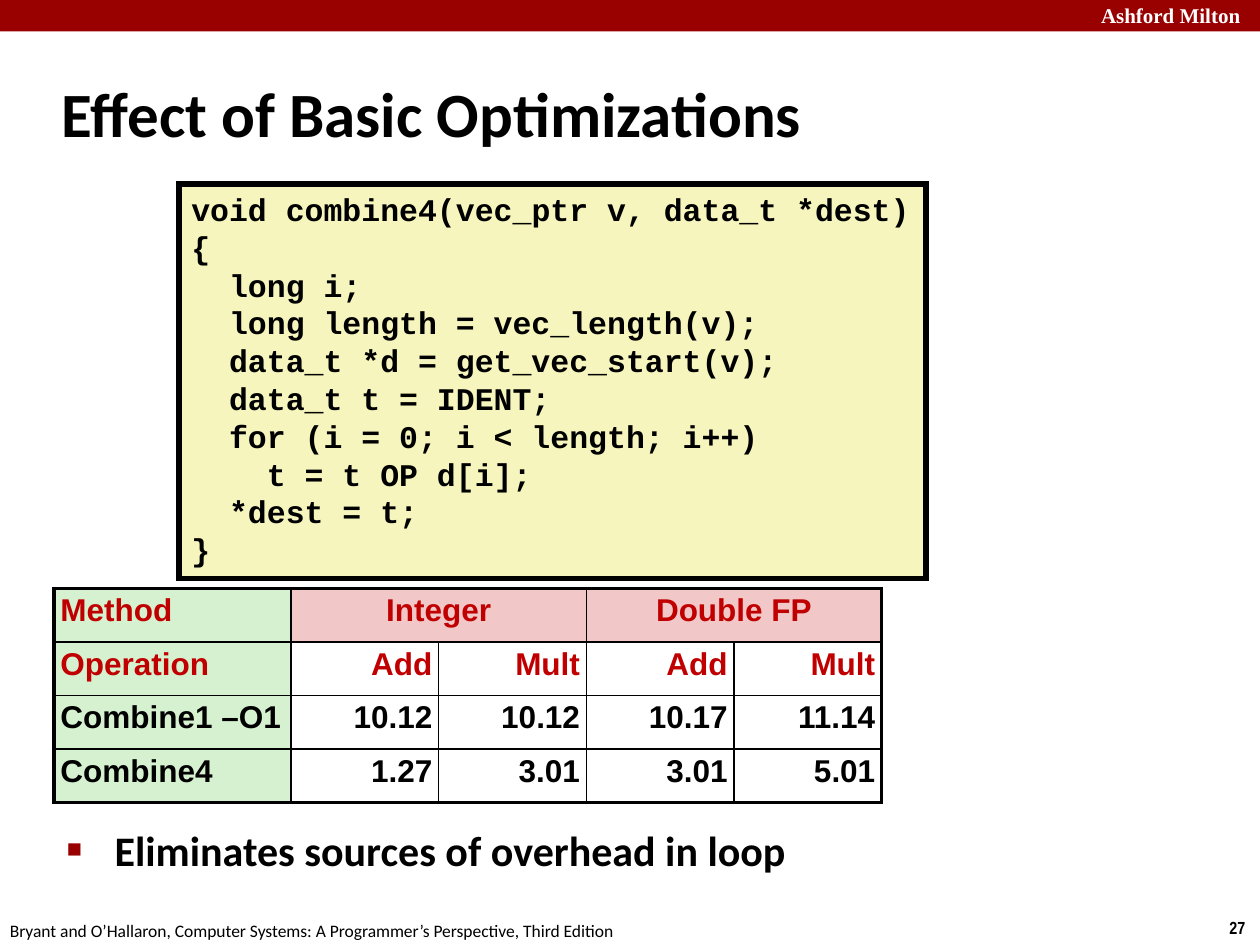
from dataclasses import dataclass
from lxml.etree import SubElement
from pptx import Presentation
from pptx.dml.color import RGBColor as Rgb
from pptx.enum.shapes import MSO_SHAPE as Shape
from pptx.enum.text import MSO_ANCHOR as Anchor, MSO_AUTO_SIZE as Fit, PP_ALIGN as Align
from pptx.oxml.ns import qn
from pptx.util import Inches, Pt


@dataclass(frozen=True)
class Theme:
    """Colours, fonts and type sizes of the slide."""
    red: str = "990000"
    head: str = "C00000"
    ink: str = "000000"
    white: str = "FFFFFF"
    cream: str = "F6F5BD"
    green: str = "D5F1CF"
    pink: str = "F1C7C7"
    sans: str = "Calibri"
    grid: str = "Arial"
    code: str = "Courier New"
    serif: str = "Times New Roman"
    slim: str = "Arial Narrow"
    title: float = 36
    body: float = 24
    main: float = 18
    mark: float = 12
    foot: float = 10
    thin: float = 1
    thick: float = 2.25
    frame: float = 3


T = Theme()
COLS, ROWS = 100, 75
STEP = Inches(10) // COLS
CODE = [
    (0, "void combine4(vec_ptr v, data_t *dest)"),
    (0, "{"),
    (1, "long i;"),
    (1, "long length = vec_length(v);"),
    (1, "data_t *d = get_vec_start(v);"),
    (1, "data_t t = IDENT;"),
    (1, "for (i = 0; i < length; i++)"),
    (2, "t = t OP d[i];"),
    (1, "*dest = t;"),
    (0, "}"),
]
DATA = [
    ["Method", "Integer", "", "Double FP", ""],
    ["Operation", "Add", "Mult", "Add", "Mult"],
    ["Combine1 –O1", "10.12", "10.12", "10.17", "11.14"],
    ["Combine4", "1.27", "3.01", "3.01", "5.01"],
]


def span(*units):
    """Turn grid units into slide lengths."""
    return [round(u * STEP) for u in units]


def write(para, text, font=T.sans, size=T.main, color=T.ink, bold=True,
          align=Align.LEFT, line=None, left=None, first=0):
    """Put formatted text into a paragraph."""
    run = para.add_run()
    run.text = text
    run.font.name, run.font.size, run.font.bold = font, Pt(size), bold
    run.font.color.rgb = Rgb.from_string(color)
    para.alignment = align
    if line is not None:
        para.line_spacing = line
    if left is not None:
        props = para._p.get_or_add_pPr()
        props.set("marL", str(span(left)[0]))
        props.set("indent", str(span(first)[0]))


def block(slide, area, fill, edge=None):
    """Add a plain rectangle with square corners."""
    shape = slide.shapes.add_shape(Shape.RECTANGLE, *span(*area))
    shape.shadow.inherit = False
    shape.fill.solid()
    shape.fill.fore_color.rgb = Rgb.from_string(fill)
    if edge:
        shape.line.color.rgb = Rgb.from_string(edge)
        shape.line.width = Pt(T.frame)
        SubElement(shape._element.spPr.find(qn("a:ln")), qn("a:miter"), lim="800000")
    else:
        shape.line.fill.background()
    return shape


def label(slide, area, text, **look):
    """Add a text box with one line."""
    frame = slide.shapes.add_textbox(*span(*area)).text_frame
    frame.word_wrap = False
    write(frame.paragraphs[0], text, **look)


def holder(shape, area, text, anchor, **look):
    """Move and fill a placeholder."""
    shape.left, shape.top, shape.width, shape.height = span(*area)
    frame = shape.text_frame
    frame.auto_size, frame.vertical_anchor = Fit.NONE, anchor
    write(frame.paragraphs[0], text, **look)
    return frame.paragraphs[0]


def bullet(para, char, color, share):
    """Give a paragraph a coloured bullet."""
    props = para._p.get_or_add_pPr()
    tint = SubElement(props, qn("a:buClr"))
    SubElement(tint, qn("a:srgbClr"), val=color)
    SubElement(props, qn("a:buSzPct"), val=str(share * 1000))
    SubElement(props, qn("a:buFont"), typeface=T.grid)
    SubElement(props, qn("a:buChar"), char=char)


def listing(slide, area, lines):
    """Add a framed box of code."""
    frame = block(slide, area, T.cream, T.ink).text_frame
    frame.word_wrap, frame.vertical_anchor = False, Anchor.TOP
    for i, (depth, text) in enumerate(lines):
        para = frame.add_paragraph() if i else frame.paragraphs[0]
        write(para, text, font=T.code, line=Pt(21.6), left=3 * depth)


def border(cell, outer):
    """Draw cell sides, thick where they are outer."""
    props = cell._tc.get_or_add_tcPr()
    for side, edge in zip("LRTB", outer):
        width = Pt(T.thick if edge else T.thin)
        line = SubElement(props, qn("a:ln" + side), w=str(int(width)))
        fill = SubElement(line, qn("a:solidFill"))
        SubElement(fill, qn("a:srgbClr"), val=T.ink)


def style(cell, row, col, text):
    """Format one table cell by its place."""
    last = col + cell.span_width == len(DATA[0]) if cell.is_merge_origin else col == len(DATA[0]) - 1
    border(cell, (col == 0, last, row == 0, row == len(DATA) - 1))
    cell.margin_left = cell.margin_right = cell.margin_top = cell.margin_bottom = span(0.5)[0]
    if col and row:
        cell.fill.background()
    else:
        cell.fill.solid()
        cell.fill.fore_color.rgb = Rgb.from_string(T.pink if col else T.green)
    if text:
        align = Align.LEFT if col == 0 else Align.RIGHT if row else Align.CENTER
        write(cell.text_frame.paragraphs[0], text, font=T.grid, line=0.95,
              color=T.head if row < 2 else T.ink, align=align)


def table(slide, area):
    """Add the table of timings."""
    grid = slide.shapes.add_table(len(DATA), len(DATA[0]), *span(*area)).table
    grid.first_row = grid.horz_banding = False
    for i, col in enumerate(grid.columns):
        col.width = span(11.72 if i else 18.8)[0]
    for row in grid.rows:
        row.height = span(area[3] / len(DATA))[0]
    for j in (1, 3):
        grid.cell(0, j).merge(grid.cell(0, j + 1))
    for i, row in enumerate(DATA):
        for j, text in enumerate(row):
            style(grid.cell(i, j), i, j, text)


def main():
    """Build the slide and save it."""
    deck = Presentation()
    deck.slide_width, deck.slide_height = span(COLS, ROWS)
    slide = deck.slides.add_slide(deck.slide_layouts[1])
    title, body = slide.placeholders
    block(slide, (0, 0, COLS, 2.5), T.red)
    label(slide, (86.4, -0.3, 14.3, 3), "Ashford Milton",
          font=T.serif, size=T.mark, color=T.white)
    label(slide, (96.6, 72.3, 3.4, 2.7), "27", font=T.slim, size=T.foot)
    label(slide, (-0.2, 72.5, 50.8, 2.7),
          "Bryant and O’Hallaron, Computer Systems: A Programmer’s Perspective, Third Edition",
          size=T.foot, bold=False)
    holder(title, (3.9, 4.8, 83, 8.3), "Effect of Basic Optimizations",
           Anchor.MIDDLE, size=T.title, left=1.3, first=-1.3)
    para = holder(body, (4.3, 64.9, 86.4, 5.9), "Eliminates sources of overhead in loop",
                  Anchor.TOP, size=T.body, left=3.8, first=-3.8)
    bullet(para, "■", T.red, 60)
    listing(slide, (14.2, 14.6, 59.3, 31.3), CODE)
    table(slide, (4.3, 46.7, 65.7, 17))
    deck.save("out.pptx")


if __name__ == "__main__":
    main()
